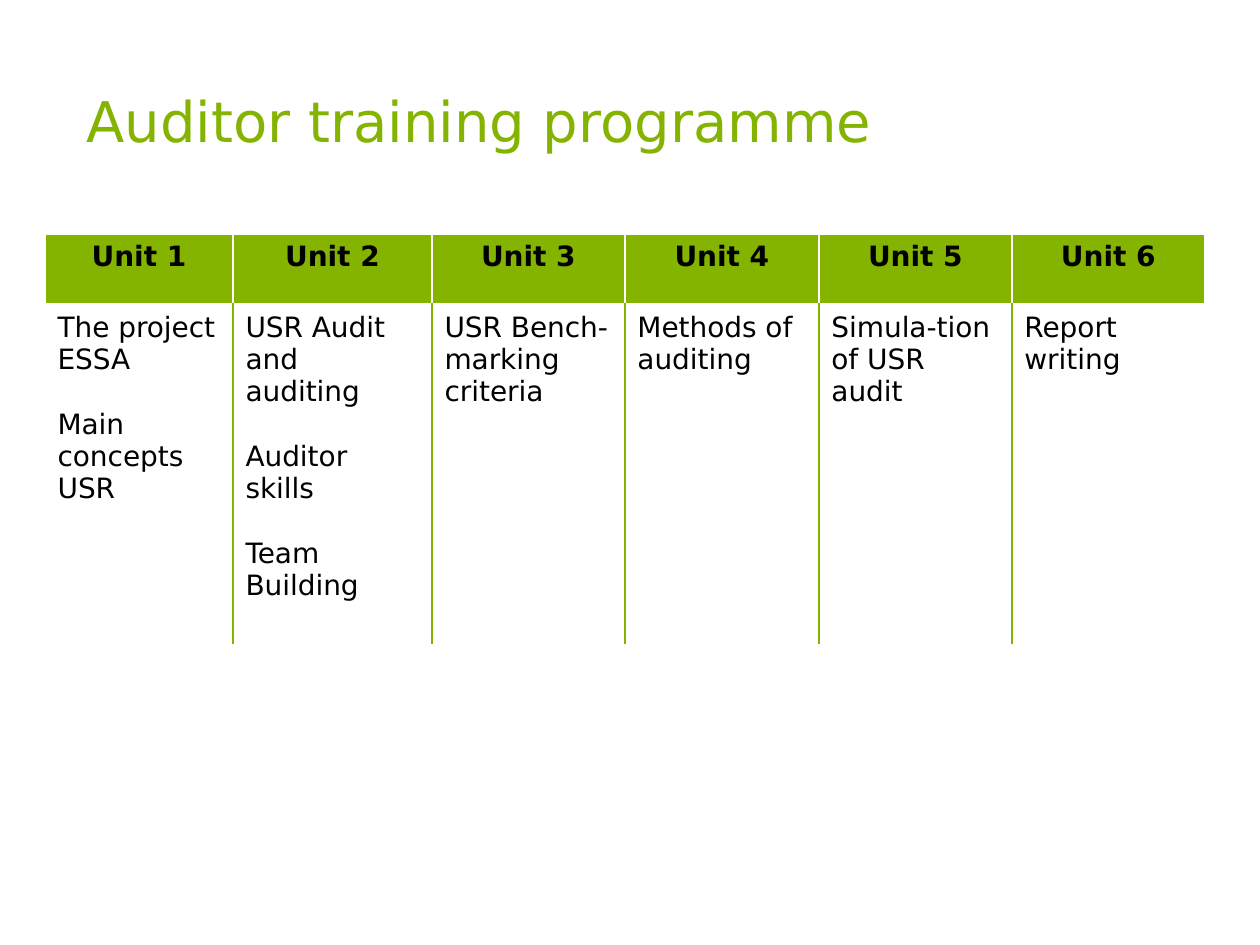
import dataclasses

import lxml.etree
import pptx
import pptx.dml.color
import pptx.enum.text
import pptx.oxml.ns
import pptx.presentation
import pptx.table
import pptx.text.text
import pptx.util

EMU_PER_PX = 914400 / 126
FONT = "DejaVu Sans"
GREEN = pptx.dml.color.RGBColor(0x84, 0xB4, 0x00)
WHITE = pptx.dml.color.RGBColor(0xFF, 0xFF, 0xFF)
BLACK = pptx.dml.color.RGBColor(0x00, 0x00, 0x00)
ALIGN = pptx.enum.text.PP_ALIGN
TOPIC_GAP = 18.5
HEADER_HEIGHT, BODY_HEIGHT = 71, 338


@dataclasses.dataclass(frozen=True)
class Unit:
    name: str
    width: int
    topics: tuple[str, ...]  # a line break inside a topic starts a paragraph without a gap


@dataclasses.dataclass(frozen=True)
class Border:
    side: str
    color: pptx.dml.color.RGBColor
    width: int = 1


UNITS = (
    Unit("Unit 1", 188, ("The project ESSA", "Main concepts\nUSR")),
    Unit("Unit 2", 199, ("USR Audit and auditing", "Auditor skills", "Team Building")),
    Unit("Unit 3", 193, ("USR Bench-marking criteria",)),
    Unit("Unit 4", 194, ("Methods of auditing",)),
    Unit("Unit 5", 193, ("Simula-tion of USR audit",)),
    Unit("Unit 6", 193, ("Report writing",)),
)


def px(length: int) -> pptx.util.Emu:
    return pptx.util.Emu(round(length * EMU_PER_PX))


def write(frame: pptx.text.text.TextFrame, topics: tuple[str, ...], *, size: int = 16,
          color: pptx.dml.color.RGBColor = BLACK, bold: bool = False,
          align: ALIGN = ALIGN.LEFT) -> None:
    """Write topics separated by a gap, each made of one or more paragraphs."""
    paragraph = frame.paragraphs[0]
    for topic_index, topic in enumerate(topics):
        for line_index, line in enumerate(topic.split("\n")):
            if topic_index or line_index:
                paragraph = frame.add_paragraph()
            starts_later_topic = topic_index and not line_index
            paragraph.space_before = pptx.util.Pt(TOPIC_GAP if starts_later_topic else 0)
            paragraph.alignment = align
            run = paragraph.add_run()
            run.text = line
            run.font.name = FONT
            run.font.size = pptx.util.Pt(size)
            run.font.bold = bold
            run.font.color.rgb = color


def set_borders(cell: pptx.table._Cell, borders: tuple[Border, ...]) -> None:
    """Draw borders, given in the order L, R, T, B that the file format asks for."""
    qn = pptx.oxml.ns.qn
    properties = cell._tc.get_or_add_tcPr()
    for position, border in enumerate(borders):
        line = lxml.etree.Element(qn(f"a:ln{border.side}"), w=str(pptx.util.Pt(border.width)))
        fill = lxml.etree.SubElement(line, qn("a:solidFill"))
        lxml.etree.SubElement(fill, qn("a:srgbClr"), val=str(border.color))
        properties.insert(position, line)


def add_title(slide: pptx.presentation.Slides, text: str) -> None:
    title = slide.shapes.title
    title.left, title.top, title.width, title.height = px(74), px(76), px(1101), px(139)
    frame = title.text_frame
    frame.auto_size = pptx.enum.text.MSO_AUTO_SIZE.NONE
    frame.vertical_anchor = pptx.enum.text.MSO_ANCHOR.TOP
    frame.margin_top = px(10)
    write(frame, (text,), size=32, color=GREEN)


def add_programme(slide: pptx.presentation.Slides, units: tuple[Unit, ...]) -> None:
    table = slide.shapes.add_table(
        2, len(units), px(45), px(234),
        px(sum(unit.width for unit in units)), px(HEADER_HEIGHT + BODY_HEIGHT),
    ).table
    table.horz_banding = False
    table.rows[0].height, table.rows[1].height = px(HEADER_HEIGHT), px(BODY_HEIGHT)
    last = len(units) - 1
    for column, unit in enumerate(units):
        table.columns[column].width = px(unit.width)
        header, body = table.cell(0, column), table.cell(1, column)

        header.fill.solid()
        header.fill.fore_color.rgb = GREEN
        write(header.text_frame, (unit.name,), bold=True, align=ALIGN.CENTER)
        set_borders(header, (Border("L", WHITE), Border("R", WHITE),
                             Border("T", WHITE), Border("B", WHITE, 3)))

        body.fill.background()
        write(body.text_frame, unit.topics)
        set_borders(body, (Border("L", GREEN if column else WHITE),
                           Border("R", GREEN if column < last else WHITE),
                           Border("T", WHITE), Border("B", WHITE)))


def main() -> None:
    deck = pptx.Presentation()
    deck.slide_width, deck.slide_height = px(1260), px(945)
    slide = deck.slides.add_slide(deck.slide_layouts[0])
    subtitle = slide.placeholders[1].element
    subtitle.getparent().remove(subtitle)
    add_title(slide, "Auditor training programme")
    add_programme(slide, UNITS)
    deck.save("out.pptx")


if __name__ == "__main__":
    main()
